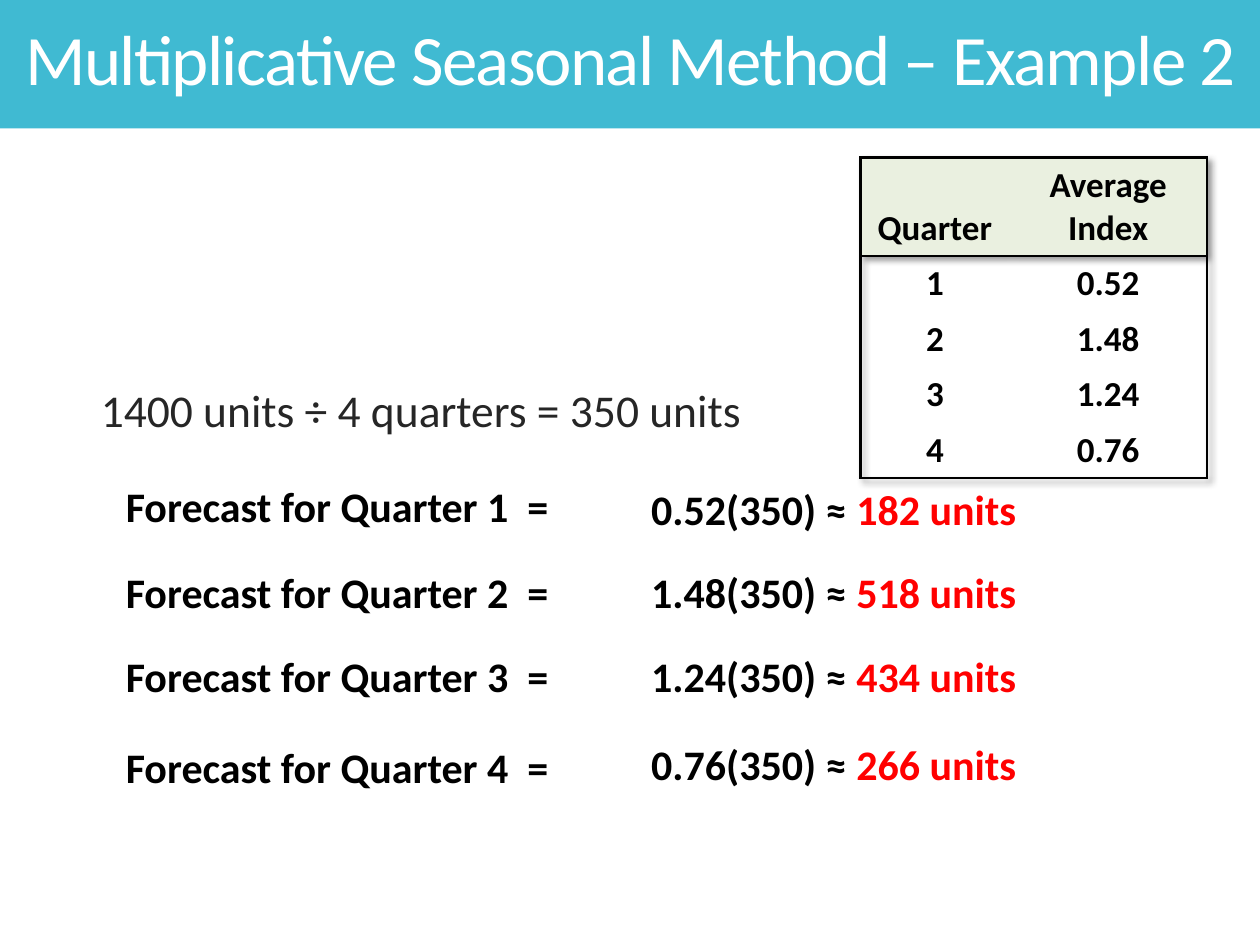
from lxml.etree import SubElement
from pptx import Presentation
from pptx.dml.color import RGBColor
from pptx.enum.text import MSO_ANCHOR, MSO_AUTO_SIZE, PP_ALIGN
from pptx.oxml import parse_xml
from pptx.oxml.ns import nsdecls, qn
from pptx.util import Inches, Pt


def rgb(value):
    return RGBColor.from_string(value)


class Deck:
    """Holds the style and the current slide, and adds each kind of element."""

    font = "Calibri"
    black, white, gray, red = "000000", "FFFFFF", "262626", "FF0000"
    teal, pale_green = "40BAD2", "EAF0E0"

    def __init__(self, prs):
        self.slide = prs.slides.add_slide(prs.slide_layouts[1])

    def place(self, sp, left, top, width, height):
        sp.left, sp.top = Inches(left), Inches(top)
        sp.width, sp.height = Inches(width), Inches(height)

    def fill_frame(self, tf, runs, size, bold=False, align=PP_ALIGN.LEFT,
                   anchor=MSO_ANCHOR.TOP, spacing=1.0):
        tf.word_wrap = True
        tf.auto_size = MSO_AUTO_SIZE.NONE
        tf.vertical_anchor = anchor
        self.add_runs(tf.paragraphs[0], runs, size, bold, align, spacing)

    def add_runs(self, p, runs, size, bold, align, spacing):
        p.alignment = align
        p.line_spacing = spacing
        for text, color in runs:
            r = p.add_run()
            r.text = text
            r.font.name = self.font
            r.font.size = Pt(size)
            r.font.bold = bold
            r.font.color.rgb = rgb(color)

    def title(self, text, *box):
        sp = self.slide.shapes.title
        self.place(sp, *box)
        sp.fill.solid()
        sp.fill.fore_color.rgb = rgb(self.teal)
        self.fill_frame(sp.text_frame, [(text, self.white)], 40.5, align=PP_ALIGN.CENTER,
                        anchor=MSO_ANCHOR.MIDDLE, spacing=0.85)
        r = sp.text_frame.paragraphs[0].runs[0]
        r._r.get_or_add_rPr().set("spc", "-90")

    def body(self, text, *box):
        sp = self.slide.placeholders[1]
        self.place(sp, *box)
        self.fill_frame(sp.text_frame, [(text, self.gray)], 26, spacing=0.75)
        p = sp.text_frame.paragraphs[0]
        p.space_before = Pt(9.8)
        pPr = p._p.get_or_add_pPr()
        pPr.set("marL", "0")
        pPr.set("indent", "0")
        SubElement(pPr, qn("a:buNone"))

    def text(self, runs, *box):
        sp = self.slide.shapes.add_textbox(*map(Inches, box))
        self.fill_frame(sp.text_frame, runs, 24, bold=True, spacing=0.9)

    def border(self, cell, visible):
        tcPr = cell._tc.get_or_add_tcPr()
        for side in "LRTB":
            ln = SubElement(tcPr, qn(f"a:ln{side}"), w=str(Pt(1.5)))
            if side in visible:
                fill = SubElement(ln, qn("a:solidFill"))
                SubElement(fill, qn("a:srgbClr"), val=self.black)
            else:
                SubElement(ln, qn("a:noFill"))

    def table(self, rows, left, top, widths, heights):
        frame = self.slide.shapes.add_table(
            len(rows), len(widths), Inches(left), Inches(top),
            Inches(sum(widths)), Inches(sum(heights)))
        table = frame.table
        table.first_row = table.horz_banding = False
        table._tbl.tblPr.insert(0, parse_xml(
            f'<a:effectLst {nsdecls("a")}><a:outerShdw blurRad="50800" dist="38100" '
            'dir="2700000" algn="tl" rotWithShape="0"><a:prstClr val="black">'
            '<a:alpha val="40000"/></a:prstClr></a:outerShdw></a:effectLst>'))
        for column, width in zip(table.columns, widths):
            column.width = Inches(width)
        for i, (row, height) in enumerate(zip(rows, heights)):
            table.rows[i].height = Inches(height)
            edges = "TB" if i == 0 else "T" if i == 1 else "B" if i == len(rows) - 1 else ""
            for j, value in enumerate(row):
                cell = table.cell(i, j)
                cell.vertical_anchor = MSO_ANCHOR.MIDDLE if i else MSO_ANCHOR.BOTTOM
                self.border(cell, edges + "LR"[j])
                if i:
                    cell.fill.background()
                else:
                    cell.fill.solid()
                    cell.fill.fore_color.rgb = rgb(self.pale_green)
                self.add_runs(cell.text_frame.paragraphs[0], [(value, self.black)],
                              20, True, PP_ALIGN.CENTER, 1.0)


def main():
    prs = Presentation()
    prs.slide_width, prs.slide_height = Inches(10), Inches(7.5)
    deck = Deck(prs)
    deck.title("Multiplicative Seasonal Method – Example 2", -0.01, 0, 10.02, 1.02)
    deck.body("1400 units ÷ 4 quarters = 350 units", 0.7, 3.08, 5.46, 0.46)

    forecasts = [
        ("0.52", "182", 3.81, 3.83),
        ("1.48", "518", 4.49, 4.49),
        ("1.24", "434", 5.16, 5.16),
        ("0.76", "266", 5.88, 5.86),
    ]
    rows = [("Quarter", "Average Index")]
    for quarter, (index, units, label_top, value_top) in enumerate(forecasts, 1):
        rows.append((str(quarter), index))
        deck.text([(f"Forecast for Quarter {quarter}  =", deck.black)],
                  0.9, label_top, 3.8, 0.42)
        deck.text([(f"{index}(350) ≈ ", deck.black), (f"{units} units", deck.red)],
                  5.07, value_top, 3.68, 0.42)
    deck.table(rows, 6.83, 1.25, [1.18, 1.57], [0.78] + [0.44] * len(forecasts))
    prs.save("out.pptx")


if __name__ == "__main__":
    main()
